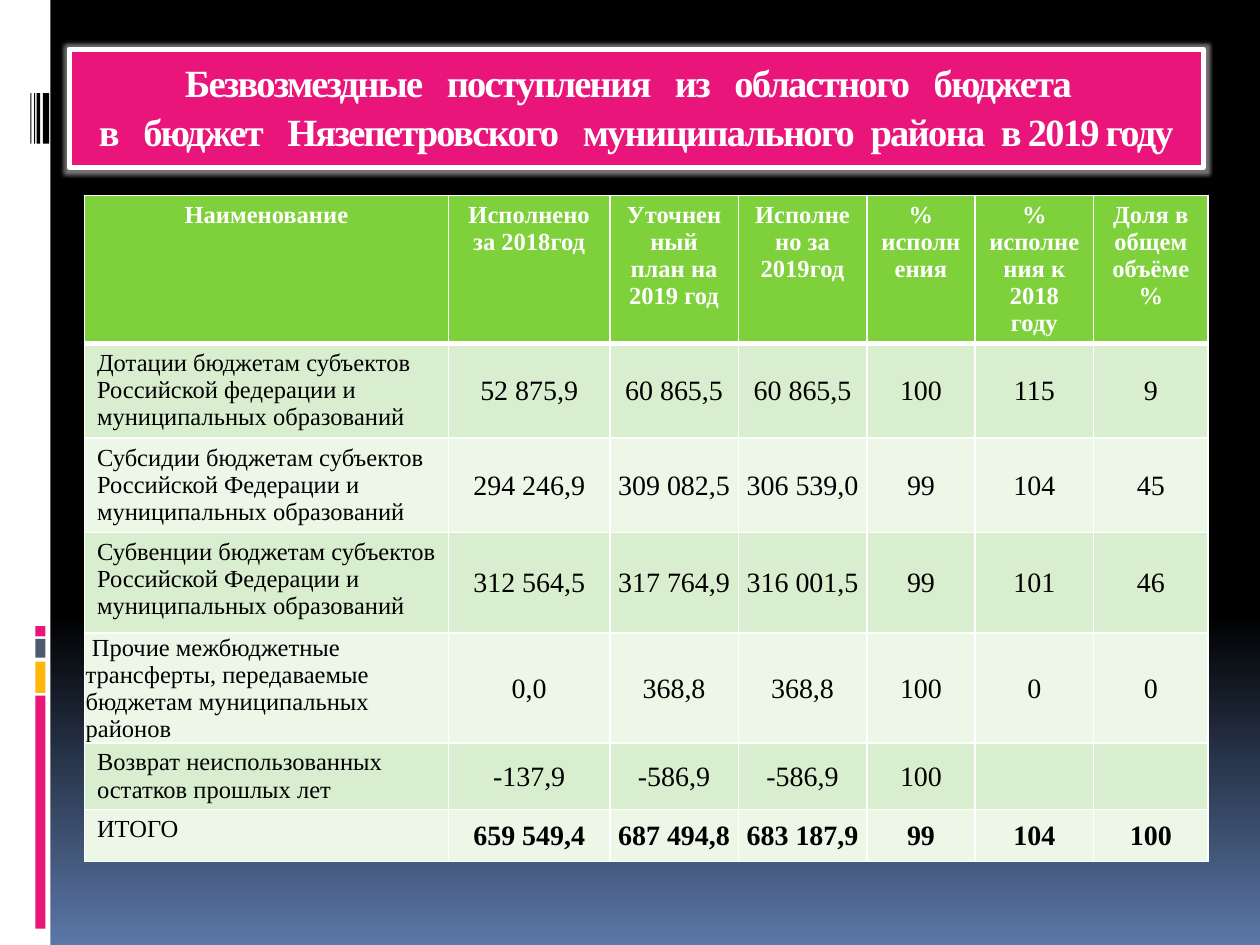
from dataclasses import dataclass
from lxml import etree
from pptx import Presentation
from pptx import util as u
from pptx.dml.color import RGBColor
from pptx.enum import shapes, text
from pptx.oxml import parse_xml
from pptx.oxml.ns import nsdecls, qn


@dataclass(frozen=True)
class Theme:
    font: str = "Times New Roman"
    white: str = "FFFFFF"
    black: str = "000000"
    pink: str = "EA157A"
    amber: str = "FEB80A"
    slate: str = "4E5B6F"
    blue: str = "5B77A8"
    green: str = "7FD13B"
    bands: tuple = ("D8EECE", "ECF7E8")
    title_size: int = 22
    label_size: int = 14
    value_size: int = 16


THEME = Theme()

TITLE = [
    [("Безвозмездные", 3), ("поступления", 3), ("из", 3), ("областного", 3), ("бюджета", 2)],
    [("в", 3), ("бюджет", 3), ("Нязепетровского", 3), ("муниципального", 2),
     ("района", 2), ("в 2019 году", 0)],
]
HEADER = ["Наименование", "Исполнено за 2018год", "Уточненный план на 2019 год",
          "Исполнено за 2019год", "% исполнения", "% исполнения к 2018 году",
          "Доля в общем объёме %"]
ROWS = [
    ["Дотации бюджетам субъектов Российской федерации и муниципальных образований",
     "52 875,9", "60 865,5", "60 865,5", "100", "115", "9"],
    ["Субсидии бюджетам субъектов Российской Федерации и муниципальных образований",
     "294 246,9", "309 082,5", "306 539,0", "99", "104", "45"],
    ["Субвенции бюджетам субъектов Российской Федерации и муниципальных образований",
     "312 564,5", "317 764,9", "316 001,5", "99", "101", "46"],
    [" Прочие межбюджетные трансферты, передаваемые бюджетам муниципальных районов",
     "0,0", "368,8", "368,8", "100", "0", "0"],
    ["Возврат неиспользованных остатков прошлых лет",
     "-137,9", "-586,9", "-586,9", "100", "", ""],
    ["ИТОГО", "659 549,4", "687 494,8", "683 187,9", "99", "104", "100"],
]
TIGHT_ROW, TOTAL_ROW = 4, len(ROWS)
COLUMN_WIDTHS = [2.89, 1.28, 1.02, 1.02, 0.86, 0.94, 0.91]
ROW_HEIGHTS = [1.17, 0.75, 0.75, 0.8, 0.87, 0.53, 0.41]

SIDE_PANEL = (0, 0, 0.4, 7.5, THEME.white)
COLOUR_BARS = [(5.52, 1.85, THEME.pink), (5.25, 0.25, THEME.amber),
               (5.07, 0.15, THEME.slate), (4.97, 0.08, THEME.pink)]
BARCODE = [(0.34, 0.05), (0.29, 0.03), (0.27, 0.01), (0.24, 0.01)]
SIDE_PARTS = ([SIDE_PANEL]
              + [(0.28, top, 0.08, height, colour) for top, height, colour in COLOUR_BARS]
              + [(left, 0.74, width, 0.4, THEME.black) for left, width in BARCODE])


def paint(fill, colour):
    fill.solid()
    fill.fore_color.rgb = RGBColor.from_string(colour)


def add_run(paragraph, wording, size, colour, bold):
    run = paragraph.add_run()
    run.text = wording
    run.font.name = THEME.font
    run.font.size = u.Pt(size)
    run.font.bold = bold
    run.font.color.rgb = RGBColor.from_string(colour)
    return run


def set_background(slide):
    slide.background.fill.gradient()
    gradient = slide.background._cSld.find(".//" + qn("a:gradFill"))
    stops = "".join(f'<a:gs pos="{share * 1000}"><a:srgbClr val="{colour}"/></a:gs>'
                    for share, colour in [(0, THEME.black), (65, THEME.black), (100, THEME.blue)])
    gradient.getparent().replace(gradient, parse_xml(
        f'<a:gradFill {nsdecls("a")} rotWithShape="1"><a:gsLst>{stops}</a:gsLst>'
        '<a:lin ang="5400000" scaled="0"/></a:gradFill>'))


def add_side_parts(slide):
    for left, top, width, height, colour in SIDE_PARTS:
        part = slide.shapes.add_shape(shapes.MSO_SHAPE.RECTANGLE,
                                      *map(u.Inches, (left, top, width, height)))
        part.shadow.inherit = False
        paint(part.fill, colour)
        part.line.fill.background()


def fill_title(heading):
    heading.left, heading.top, heading.width, heading.height = map(u.Inches, (0.55, 0.39, 9, 0.94))
    paint(heading.fill, THEME.pink)
    paint(heading.line.fill, THEME.white)
    heading.line.width = u.Pt(3)
    heading._element.spPr.append(parse_xml(
        f'<a:effectLst {nsdecls("a")}><a:glow rad="50800"><a:srgbClr val="{THEME.white}">'
        '<a:alpha val="45000"/></a:srgbClr></a:glow></a:effectLst>'))
    frame = heading.text_frame
    frame.word_wrap = True
    frame.auto_size = text.MSO_AUTO_SIZE.NONE
    frame.vertical_anchor = text.MSO_ANCHOR.TOP
    paragraph = frame.paragraphs[0]
    paragraph.alignment = text.PP_ALIGN.CENTER
    paragraph.line_spacing = 1.07
    space_width = THEME.title_size / 4 - 1
    for number, line in enumerate(TITLE):
        if number:
            paragraph.add_line_break()
        for word, gap in line:
            pieces = [(word, -1)]
            if gap:
                pieces.append((" ", gap * space_width - THEME.title_size / 4))
            for wording, spacing in pieces:
                run = add_run(paragraph, wording, THEME.title_size, THEME.white, True)
                run.font._element.set("spc", str(int(spacing * 100)))


def set_borders(cell, bottom):
    properties = cell._tc.get_or_add_tcPr()
    for position, (side, width) in enumerate([("L", 1), ("R", 1), ("T", 1), ("B", bottom)]):
        edge = etree.Element(qn(f"a:ln{side}"), w=str(u.Pt(width)))
        colour = etree.SubElement(etree.SubElement(edge, qn("a:solidFill")), qn("a:srgbClr"))
        colour.set("val", THEME.white)
        properties.insert(position, edge)


def fill_cell(cell, wording, row, column):
    is_header, is_value = row == 0, row > 0 and column > 0
    paint(cell.fill, THEME.green if is_header else THEME.bands[(row - 1) % 2])
    set_borders(cell, 3 if is_header else 1)
    if is_value or (row == TIGHT_ROW and column == 0):
        cell.vertical_anchor = text.MSO_ANCHOR.MIDDLE
        cell.margin_left = cell.margin_right = cell.margin_top = u.Inches(0.01)
        cell.margin_bottom = 0
    paragraph = cell.text_frame.paragraphs[0]
    paragraph.alignment = text.PP_ALIGN.CENTER if is_header or is_value else text.PP_ALIGN.LEFT
    if wording:
        add_run(paragraph, wording,
                THEME.value_size if is_value else THEME.label_size,
                THEME.white if is_header else THEME.black,
                is_header or (is_value and row == TOTAL_ROW))


def add_budget_table(slide):
    budget = slide.shapes.add_table(
        len(ROW_HEIGHTS), len(COLUMN_WIDTHS), u.Inches(0.67), u.Inches(1.55),
        u.Inches(sum(COLUMN_WIDTHS)), u.Inches(sum(ROW_HEIGHTS))).table
    for column, width in zip(budget.columns, COLUMN_WIDTHS):
        column.width = u.Inches(width)
    for row, height in zip(budget.rows, ROW_HEIGHTS):
        row.height = u.Inches(height)
    for row, entries in enumerate([HEADER] + ROWS):
        for column, wording in enumerate(entries):
            fill_cell(budget.cell(row, column), wording, row, column)


def main():
    deck = Presentation()
    deck.slide_width, deck.slide_height = u.Inches(10), u.Inches(7.5)
    slide = deck.slides.add_slide(deck.slide_layouts[5])
    set_background(slide)
    add_side_parts(slide)
    fill_title(slide.shapes.title)
    add_budget_table(slide)
    deck.save("out.pptx")


if __name__ == "__main__":
    main()
